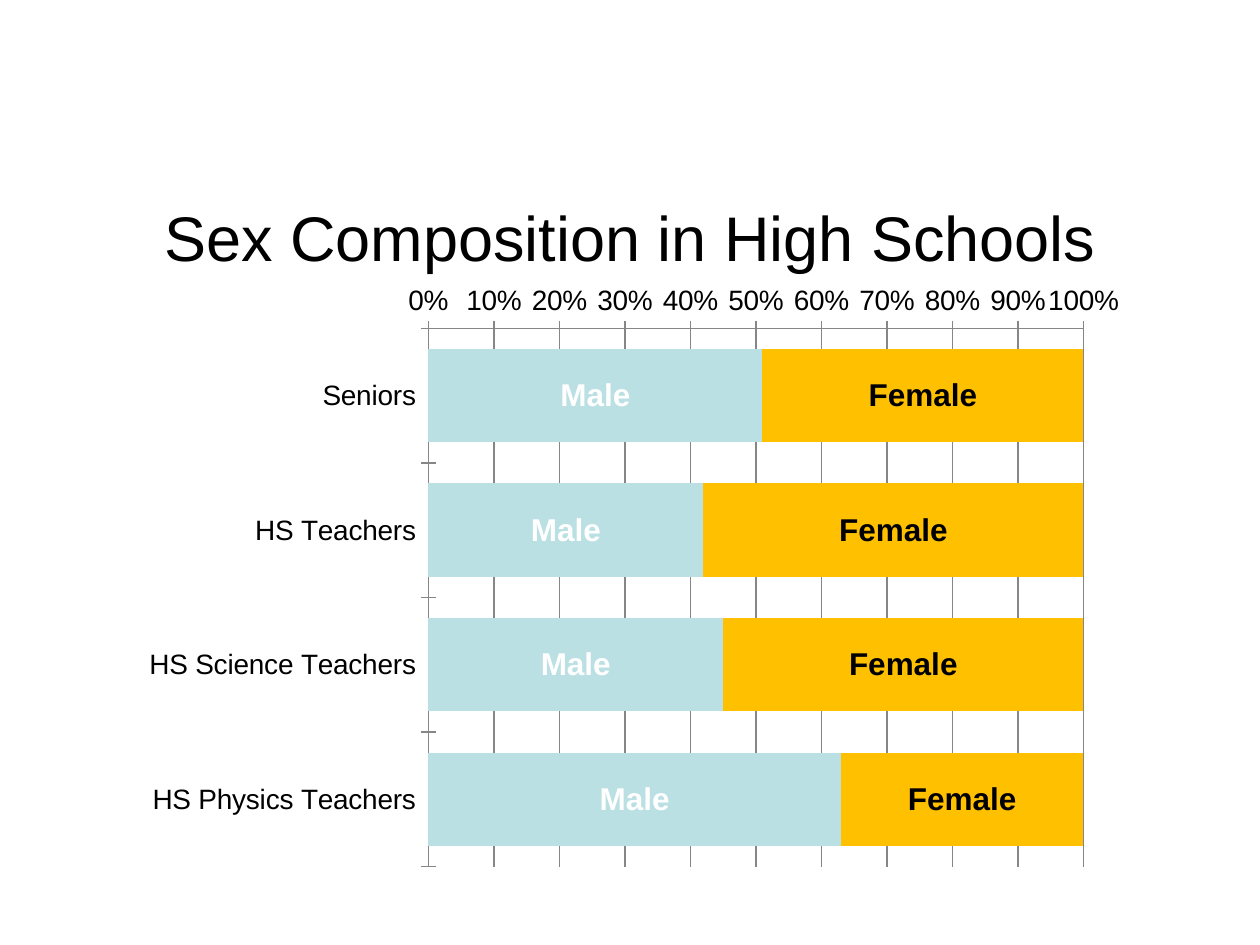
from lxml import etree
from pptx import Presentation
from pptx.chart.data import CategoryChartData
from pptx.dml.color import RGBColor
from pptx.enum.chart import XL_CHART_TYPE, XL_LABEL_POSITION, XL_TICK_MARK
from pptx.enum.text import MSO_ANCHOR, PP_ALIGN
from pptx.oxml.ns import qn
from pptx.util import Inches, Pt

STACKED_BARS = XL_CHART_TYPE.BAR_STACKED_100
LABEL_CENTER = XL_LABEL_POSITION.CENTER
TICK_CROSS = XL_TICK_MARK.CROSS
MIDDLE = MSO_ANCHOR.MIDDLE
CENTER = PP_ALIGN.CENTER

WIDTH, HEIGHT = Inches(10), Inches(7.5)
FONT = "Arial"
COLORS = {"text": "000000", "male": "BBE0E3", "female": "FFC000",
          "male_label": "FFFFFF", "axis": "868686"}

GROUPS = ["Seniors", "HS Teachers", "HS Science Teachers", "HS Physics Teachers"]
# Series name: values, bar colour, label colour
SEXES = {
    "Male": ([51, 42, 45, 63], "male", "male_label"),
    "Female": ([49, 58, 55, 37], "female", "text"),
}
# Inner plot area as shares of the chart
PLOT_AREA = {"x": 0.3, "y": 0.09, "w": 0.65, "h": 0.89}


def rgb(key):
    return RGBColor.from_string(COLORS[key])


def box(left, top, width, height):
    """Turn shares of the slide into lengths."""
    return (int(WIDTH * left), int(HEIGHT * top),
            int(WIDTH * width), int(HEIGHT * height))


def style_font(font, size, color="text", bold=False):
    font.name, font.size, font.bold = FONT, Pt(size), bold
    font.color.rgb = rgb(color)


def add_title(slide, text, place):
    frame = slide.shapes.add_textbox(*place).text_frame
    frame.word_wrap = True
    frame.vertical_anchor = MIDDLE
    heading = frame.paragraphs[0]
    heading.text = text
    heading.alignment = CENTER
    style_font(heading.font, 36)


def set_plot_layout(chart):
    plot_area = chart.plots[0]._element.getparent()
    layout = plot_area.find(qn("c:layout"))
    if layout is None:
        layout = etree.Element(qn("c:layout"))
        plot_area.insert(0, layout)
    manual = etree.SubElement(layout, qn("c:manualLayout"))
    settings = {"layoutTarget": "inner", "xMode": "edge", "yMode": "edge"}
    for tag, value in (settings | PLOT_AREA).items():
        etree.SubElement(manual, qn(f"c:{tag}")).set("val", str(value))


def style_axes(chart):
    groups, shares = chart.category_axis, chart.value_axis
    groups.reverse_order = True
    shares.has_major_gridlines = True
    shares.major_gridlines.format.line.color.rgb = rgb("axis")
    shares.maximum_scale, shares.major_unit = 1, 0.1
    shares.minimum_scale = 0
    shares.tick_labels.number_format = "0%"
    shares.tick_labels.number_format_is_linked = False
    for axis in (groups, shares):
        axis.major_tick_mark = TICK_CROSS
        axis.format.line.color.rgb = rgb("axis")


def style_series(series, fill, label_color):
    series.format.fill.solid()
    series.format.fill.fore_color.rgb = rgb(fill)
    labels = series.data_labels
    labels.show_series_name = True
    labels.show_value = False
    labels.position = LABEL_CENTER
    style_font(labels.font, 18, label_color, bold=True)


def add_composition_chart(slide, place):
    data = CategoryChartData()
    data.categories = GROUPS
    for sex, (values, _, _) in SEXES.items():
        data.add_series(sex, values)
    chart = slide.shapes.add_chart(STACKED_BARS, *place, data).chart
    chart.has_legend = chart.has_title = False
    style_font(chart.font, 16)
    bars = chart.plots[0]
    bars.gap_width, bars.overlap = 44, 100
    bars.vary_by_categories = False
    for series, (_, fill, label_color) in zip(bars.series, SEXES.values()):
        style_series(series, fill, label_color)
    style_axes(chart)
    set_plot_layout(chart)


def main():
    deck = Presentation()
    deck.slide_width, deck.slide_height = WIDTH, HEIGHT
    slide = deck.slides.add_slide(deck.slide_layouts[6])
    # Heading
    add_title(slide, "Sex Composition in High Schools", box(0.05, 0.2, 0.9, 0.1))
    # Male and female shares by group
    add_composition_chart(slide, box(0.1, 0.29, 0.8, 0.64))
    deck.save("out.pptx")


if __name__ == "__main__":
    main()
